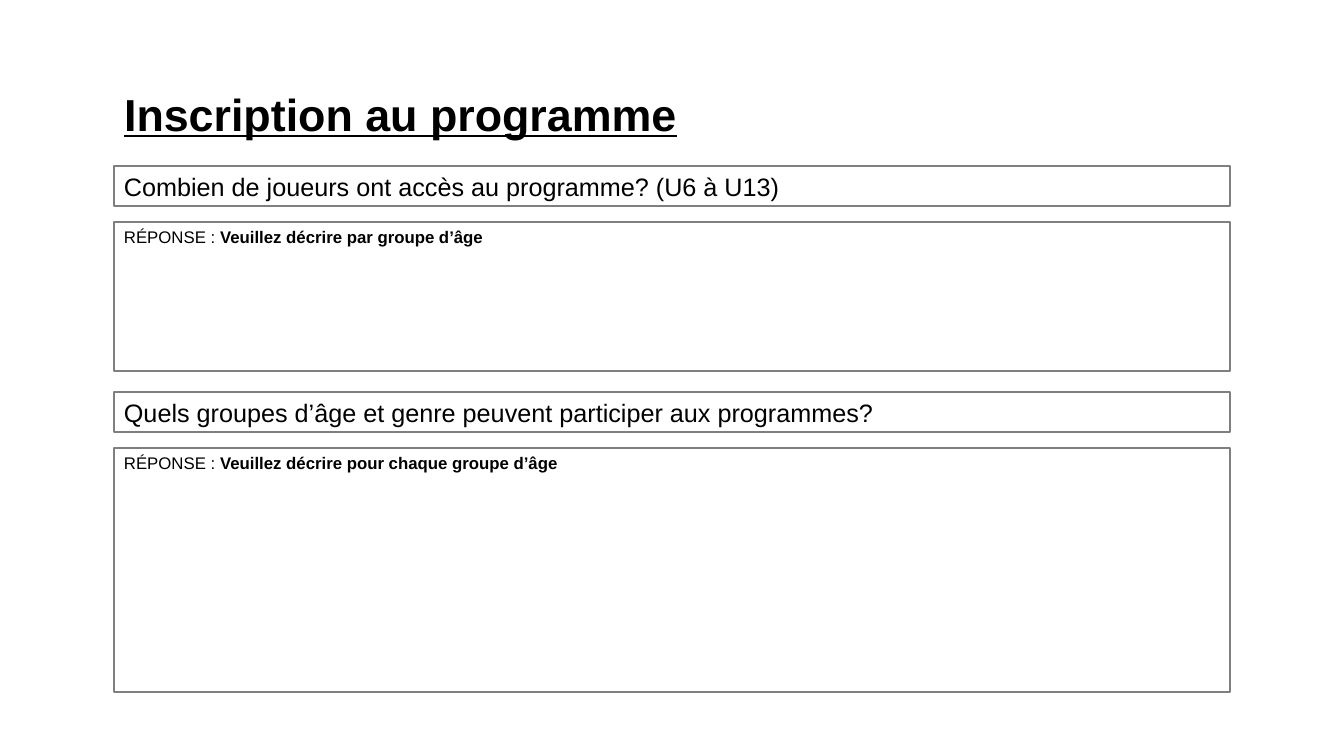
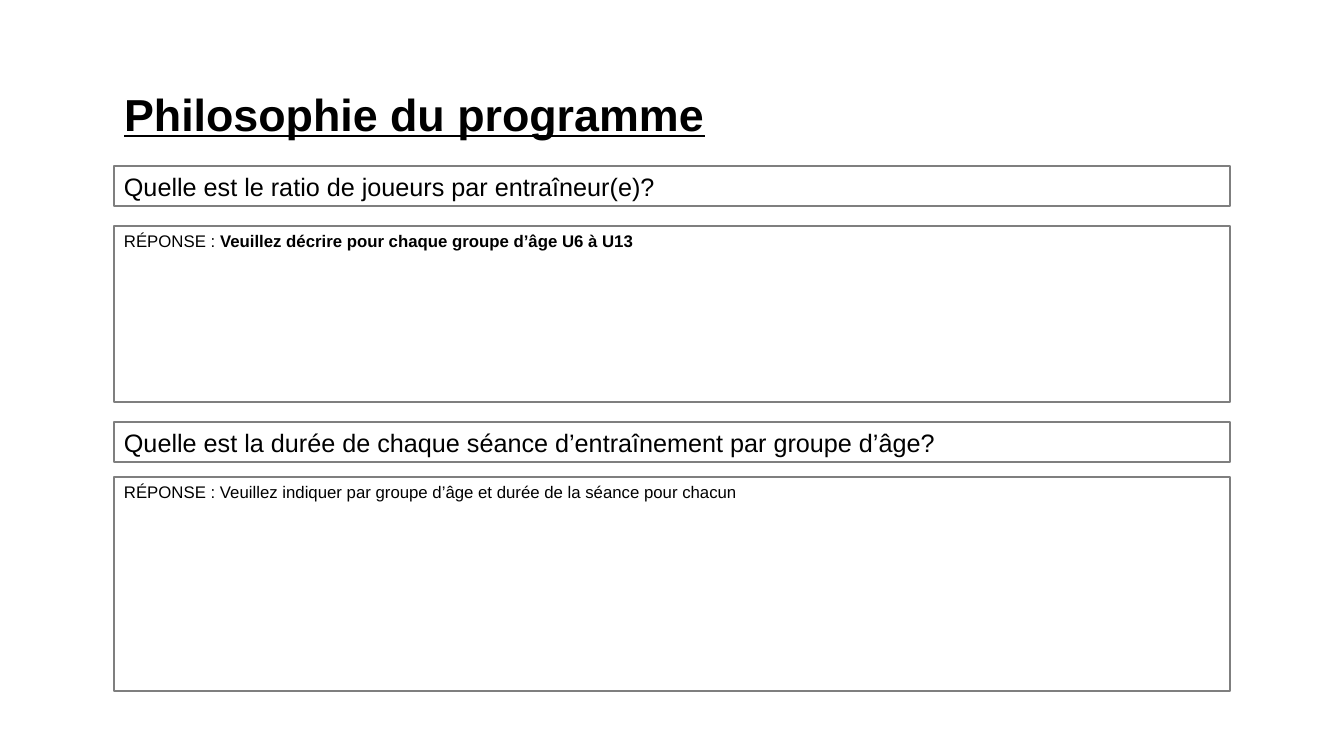
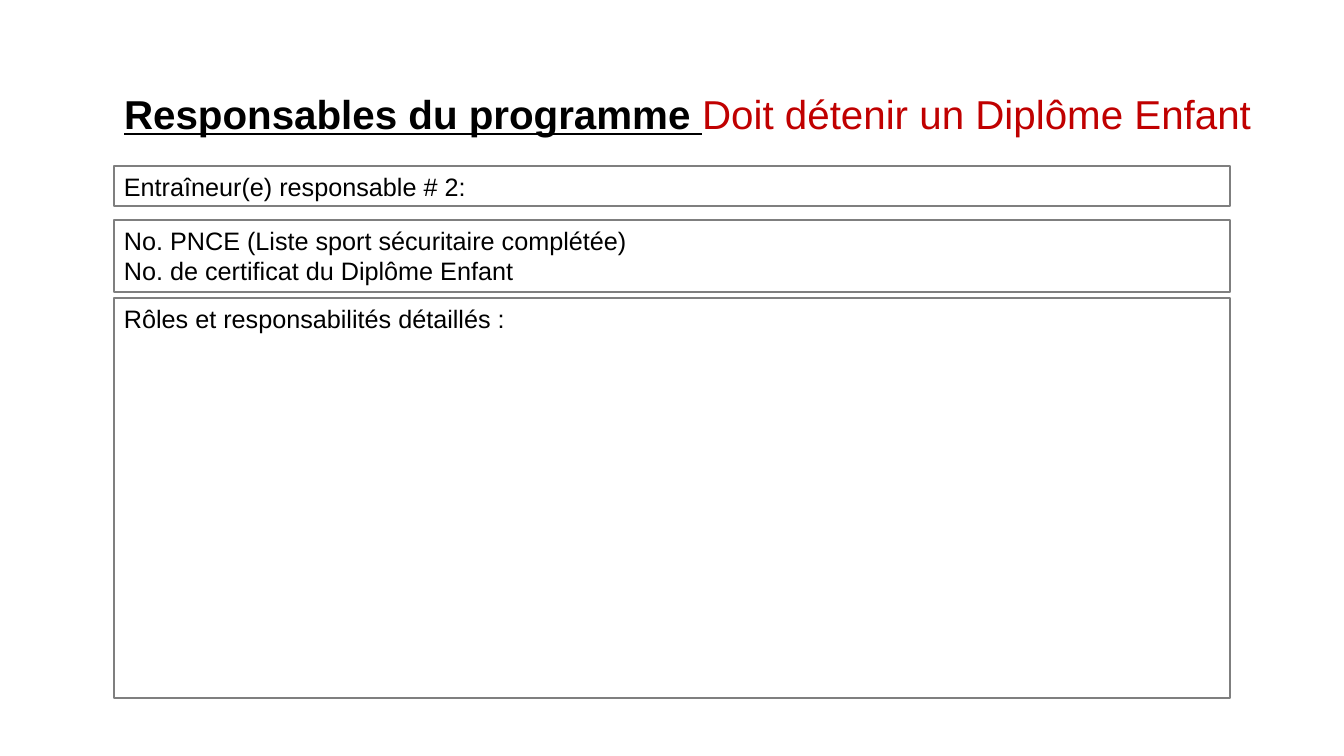
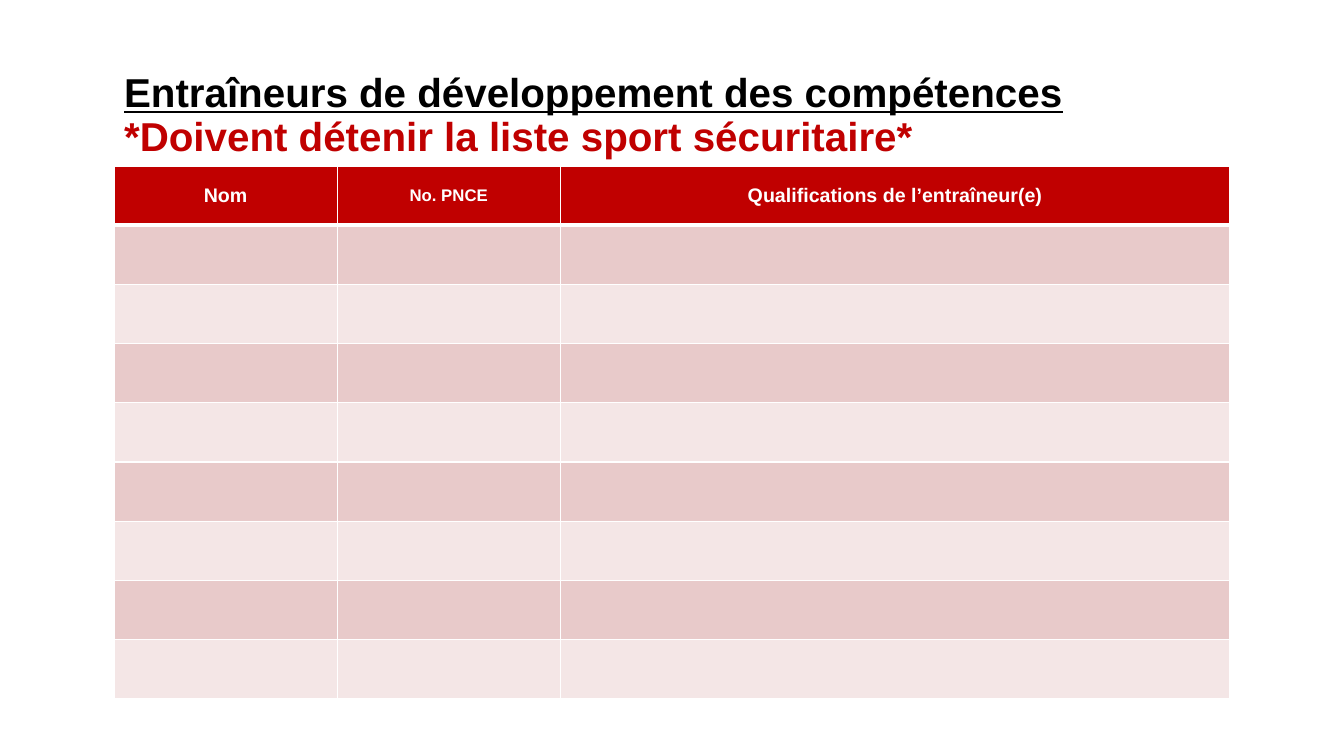
from copy import deepcopy
from dataclasses import dataclass

from pptx import Presentation
from pptx.dml.color import RGBColor as Rgb
from pptx.enum.shapes import MSO_SHAPE as Shape
from pptx.enum.text import MSO_ANCHOR as Anchor, MSO_AUTO_SIZE as Fit, PP_ALIGN as Align
from pptx.oxml import parse_xml
from pptx.oxml.ns import nsdecls
from pptx.util import Pt


@dataclass(frozen=True)
class Theme:
    """Colours, font and type sizes of the deck."""
    font: str = "Arial"
    ink: str = "000000"
    paper: str = "FFFFFF"
    edge: str = "7F7F7F"
    red: str = "C00000"
    bands: tuple = ("F4E6E6", "E8CACA")
    head: float = 32
    dual: float = 28.8
    body: float = 18
    label: float = 14
    note: float = 12


THEME = Theme()
WIDE, HIGH = 1344, 756
LEFT, TOP, SPAN = 114, 166, 1116
TITLE = (LEFT, 67, 1190, 99)
ROW = 40


def px(num):
    """Turn pixels into EMU."""
    return round(num * 914400 / 100.8)


def write(para, text, size=THEME.body, color=THEME.ink, bold=False, under=False):
    """Add a formatted run, with a line break if the text ends in one."""
    run = para.add_run()
    run.text = text.rstrip("\n")
    font = run.font
    font.name, font.size, font.bold, font.underline = THEME.font, Pt(size), bold, under
    font.color.rgb = Rgb.from_string(color)
    if text.endswith("\n"):
        para.add_line_break()
        para._p[-1].append(deepcopy(run._r.rPr))


def start(deck, *runs):
    """Add a slide whose title holds the given (text, format) runs."""
    slide = deck.slides.add_slide(deck.slide_layouts[5])
    title = slide.shapes.title
    title.left, title.top, title.width, title.height = map(px, TITLE)
    frame = title.text_frame
    frame.auto_size, frame.word_wrap = Fit.NONE, True
    frame.vertical_anchor = Anchor.MIDDLE
    para = frame.paragraphs[0]
    para.alignment, para.line_spacing = Align.LEFT, 0.9
    for text, form in runs:
        write(para, text, **form)
    return slide


def panel(slide, box, *lines):
    """Draw an outlined box with one paragraph per list of runs."""
    shape = slide.shapes.add_shape(Shape.RECTANGLE, *map(px, box))
    shape.shadow.inherit = False
    shape.fill.solid()
    shape.fill.fore_color.rgb = Rgb.from_string(THEME.paper)
    shape.line.color.rgb = Rgb.from_string(THEME.edge)
    shape.line.width = Pt(1)
    frame = shape.text_frame
    frame.word_wrap, frame.vertical_anchor = True, Anchor.TOP
    for num, runs in enumerate(lines):
        para = frame.add_paragraph() if num else frame.paragraphs[0]
        para.alignment = Align.LEFT
        for text, form in runs:
            write(para, text, **form)


def ask(slide, box, query, hint, gap=16, bold=True):
    """Place a question row and, below a gap, its answer area."""
    left, top, width, height = box
    skip = ROW + gap
    panel(slide, (left, top, width, ROW), [(query, {})])
    panel(slide, (left, top + skip, width, height - skip),
          [("RÉPONSE : ", {"size": THEME.note}),
           (hint, {"size": THEME.note, "bold": bold})])


def lead(slide, box, name, proofs, roles):
    """Place the name, certificate and role areas of one coach."""
    left, top, width, height = box
    mid, low = 54, 132
    panel(slide, (left, top, width, ROW), [(name, {})])
    panel(slide, (left, top + mid, width, 72), *([(text, {})] for text in proofs))
    panel(slide, (left, top + low, width, height - low), [(roles, {})])


def rule(cell, **sides):
    """Give a cell paper-coloured borders of the given point widths."""
    for side, width in sides.items():
        cell._tc.get_or_add_tcPr().append(parse_xml(
            f'<a:ln{side} {nsdecls("a")} w="{Pt(width)}"><a:solidFill>'
            f'<a:srgbClr val="{THEME.paper}"/></a:solidFill></a:ln{side}>'))


def roster(slide, box, heads, parts, count):
    """Draw a banded table with a header and empty rows to fill in."""
    grid = slide.shapes.add_table(count + 1, len(heads), *map(px, box)).table
    for col, part in zip(grid.columns, parts):
        col.width = px(box[2] * part / sum(parts))
    for num, row in enumerate(grid.rows):
        row.height = px(box[3] / (count + 1))
        for cell, (text, size) in zip(row.cells, heads):
            rule(cell, L=1, R=1, T=3 if num == 1 else 1, B=1 if num else 3)
            cell.fill.solid()
            tint = THEME.bands[num % 2] if num else THEME.red
            cell.fill.fore_color.rgb = Rgb.from_string(tint)
            cell.vertical_anchor = Anchor.MIDDLE
            if not num:
                para = cell.text_frame.paragraphs[0]
                para.alignment = Align.CENTER
                write(para, text, size=size, color=THEME.paper, bold=True)


def main():
    """Build and save the deck."""
    deck = Presentation()
    deck.slide_width, deck.slide_height = px(WIDE), px(HIGH)
    head = {"size": THEME.head, "bold": True, "under": True}
    dual = {**head, "size": THEME.dual}
    alert = {"size": THEME.dual, "color": THEME.red}

    slide = start(deck, ("Inscription au programme", head))
    ask(slide, (LEFT, TOP, SPAN, 205),
        "Combien de joueurs ont accès au programme? (U6 à U13)",
        "Veuillez décrire par groupe d’âge")
    ask(slide, (LEFT, 392, SPAN, 300),
        "Quels groupes d’âge et genre peuvent participer aux programmes?",
        "Veuillez décrire pour chaque groupe d’âge")

    slide = start(deck, ("Philosophie du programme", head))
    ask(slide, (LEFT, TOP, SPAN, 236),
        "Quelle est le ratio de joueurs par entraîneur(e)?",
        "Veuillez décrire pour chaque groupe d’âge U6 à U13", gap=20)
    ask(slide, (LEFT, 422, SPAN, 269),
        "Quelle est la durée de chaque séance d’entraînement par groupe d’âge?",
        "Veuillez indiquer par groupe d’âge et durée de la séance pour chacun",
        gap=15, bold=False)

    slide = start(deck, ("Responsables du programme ", dual),
                  ("Doit détenir un Diplôme Enfant", alert))
    lead(slide, (LEFT, TOP, SPAN, 532), "Entraîneur(e) responsable # 2:",
         ("No. PNCE (Liste sport sécuritaire complétée)",
          "No. de certificat du Diplôme Enfant"),
         "Rôles et responsabilités détaillés :")

    slide = start(deck, ("Entraîneurs de développement des compétences\n", dual),
                  ("*Doivent détenir la liste sport sécuritaire*", {**alert, "bold": True}))
    roster(slide, (LEFT, TOP, SPAN, 533),
           (("Nom", THEME.label), ("No. PNCE", THEME.note),
            ("Qualifications de l’entraîneur(e)", THEME.label)), (1, 1, 3), 8)

    deck.save("out.pptx")


if __name__ == "__main__":
    main()
